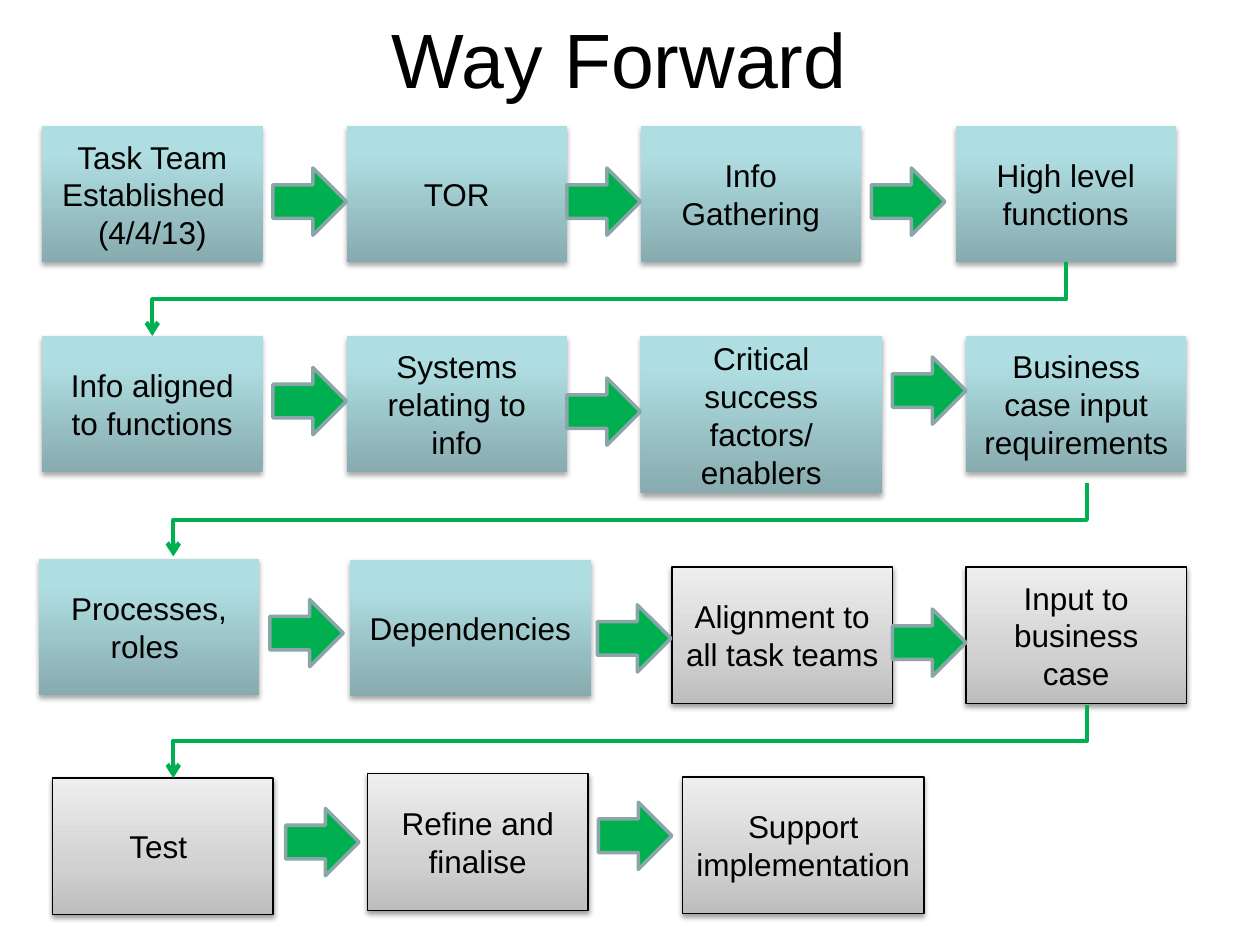
from dataclasses import dataclass

from pptx import Presentation
from pptx.dml.color import RGBColor
from pptx.enum.shapes import MSO_CONNECTOR, MSO_SHAPE
from pptx.enum.text import MSO_ANCHOR, PP_ALIGN
from pptx.oxml import parse_xml
from pptx.oxml.ns import nsdecls
from pptx.util import Inches, Length, Pt

PROCESS = MSO_SHAPE.FLOWCHART_PROCESS
RIGHT_ARROW = MSO_SHAPE.RIGHT_ARROW
ELBOW = MSO_CONNECTOR.ELBOW
CENTER = PP_ALIGN.CENTER
MIDDLE = MSO_ANCHOR.MIDDLE

WIDTH, HEIGHT = Inches(10), Inches(7.5)
COLS, ROWS = 120, 90
FONT = "Arial"
BLACK = RGBColor(0x00, 0x00, 0x00)
GREEN = RGBColor(0x00, 0xB0, 0x50)
ARROW_EDGE = RGBColor(0x8A, 0xA6, 0xA8)
TEAL_DARK = RGBColor(0x87, 0xAB, 0xAE)
TEAL = RGBColor(0xAF, 0xDE, 0xE2)
TEAL_LIGHT = RGBColor(0xAF, 0xE0, 0xE4)
GREY_DARK = RGBColor(0xBD, 0xBD, 0xBD)
GREY = RGBColor(0xD1, 0xD1, 0xD1)
GREY_LIGHT = RGBColor(0xEE, 0xEE, 0xEE)

NARROW, WIDE = 21, 23
BOX_ROWS = 13
ARROW_COLS, ARROW_ROWS = 7, 6.4
RETURN_COLS, RETURN_ROWS = 87, 7


@dataclass(frozen=True)
class Style:
    stops: tuple[tuple[int, RGBColor], ...]
    outlined: bool
    shadow_alpha: int
    shadow_distance: float


@dataclass(frozen=True)
class Step:
    text: str
    col: float
    row: float
    style: Style
    cols: float = NARROW
    rows: float = BOX_ROWS


DONE = Style(((0, TEAL_DARK), (80, TEAL), (100, TEAL_LIGHT)), False, 35, 1.8)
TODO = Style(((0, GREY_DARK), (35, GREY), (100, GREY_LIGHT)), True, 38, 1.6)

STEPS = (
    Step("Task Team Established  \n(4/4/13)", 4, 12, DONE),
    Step("TOR", 33, 12, DONE),
    Step("Info Gathering", 61, 12, DONE),
    Step("High level functions", 91, 12, DONE),
    Step("Info aligned to functions", 4, 32, DONE),
    Step("Systems relating to info", 33, 32, DONE),
    Step("Critical success factors/ enablers", 61, 32, DONE, WIDE, 15),
    Step("Business case input requirements", 92, 32, DONE),
    Step("Processes, roles ", 3.7, 53.2, DONE),
    Step("Dependencies", 33.3, 53.3, DONE, WIDE),
    Step("Alignment to all task teams", 64, 54, TODO),
    Step("Input to business case", 92, 54, TODO),
    Step("Test ", 5, 74.1, TODO),
    Step("Refine and finalise", 35, 73.7, TODO),
    Step("Support implementation", 65, 74, TODO, WIDE),
)
ARROWS = (
    (26, 16), (54, 16), (83, 16),
    (26, 35), (54, 36), (85, 34),
    (25.7, 57.1), (56.9, 57.6), (85, 58),
    (27.2, 77), (57, 76.4),
)
RETURNS = ((101.5, 25), (103.5, 46), (103.5, 67.1))


def x(cols: float) -> Length:
    return Length(round(WIDTH * cols / COLS))


def y(rows: float) -> Length:
    return Length(round(HEIGHT * rows / ROWS))


def format_text(tf, size: int) -> None:
    tf.word_wrap = True
    tf.vertical_anchor = MIDDLE
    for p in tf.paragraphs:
        p.alignment = CENTER
        for r in p.runs:
            r.font.name = FONT
            r.font.size = Pt(size)
            r.font.color.rgb = BLACK


def gradient_xml(style: Style) -> str:
    stops = "".join(
        f'<a:gs pos="{pos * 1000}"><a:srgbClr val="{color}"/></a:gs>'
        for pos, color in style.stops
    )
    return (f'<a:gradFill {nsdecls("a")} rotWithShape="1"><a:gsLst>{stops}</a:gsLst>'
            '<a:lin ang="16200000" scaled="0"/></a:gradFill>')


def shadow_xml(style: Style) -> str:
    return (f'<a:effectLst {nsdecls("a")}><a:outerShdw blurRad="{Pt(3.1)}" '
            f'dist="{Pt(style.shadow_distance)}" dir="5400000" rotWithShape="0">'
            f'<a:srgbClr val="{BLACK}"><a:alpha val="{style.shadow_alpha * 1000}"/>'
            '</a:srgbClr></a:outerShdw></a:effectLst>')


def add_step(shapes, step: Step) -> None:
    s = shapes.add_shape(PROCESS, x(step.col), y(step.row), x(step.cols), y(step.rows))
    if step.style.outlined:
        s.line.color.rgb = BLACK
        s.line.width = Pt(0.75)
    else:
        s.line.fill.background()
    props = s._element.spPr
    props.insert(2, parse_xml(gradient_xml(step.style)))
    props.append(parse_xml(shadow_xml(step.style)))
    s.text_frame.text = step.text
    format_text(s.text_frame, 18)


def add_arrow(shapes, col: float, row: float) -> None:
    s = shapes.add_shape(RIGHT_ARROW, x(col), y(row), x(ARROW_COLS), y(ARROW_ROWS))
    s.shadow.inherit = False
    s.fill.solid()
    s.fill.fore_color.rgb = GREEN
    s.line.color.rgb = ARROW_EDGE
    s.line.width = Pt(2)


def add_return(shapes, col: float, row: float) -> None:
    mid_x = x(col - RETURN_COLS / 2)
    mid_y = y(row + RETURN_ROWS / 2)
    half_w, half_h = y(RETURN_ROWS / 2), x(RETURN_COLS / 2)
    s = shapes.add_connector(ELBOW, mid_x - half_w, mid_y - half_h,
                             mid_x + half_w, mid_y + half_h)
    s.line.color.rgb = GREEN
    s.line.width = Pt(2.5)
    props = s._element.spPr
    props.xfrm.set("rot", "5400000")
    props.ln.append(parse_xml(f'<a:tailEnd {nsdecls("a")} type="arrow"/>'))
    props.append(parse_xml(f'<a:effectLst {nsdecls("a")}/>'))


def main() -> None:
    prs = Presentation()
    prs.slide_width, prs.slide_height = WIDTH, HEIGHT
    slide = prs.slides.add_slide(prs.slide_layouts[5])
    title = slide.shapes.title
    title.left, title.top, title.width, title.height = x(6), y(0), x(108), y(11)
    title.text_frame.text = "Way Forward "
    format_text(title.text_frame, 44)
    for step in STEPS:
        add_step(slide.shapes, step)
    for col, row in ARROWS:
        add_arrow(slide.shapes, col, row)
    for col, row in RETURNS:
        add_return(slide.shapes, col, row)
    prs.save("out.pptx")


if __name__ == "__main__":
    main()
